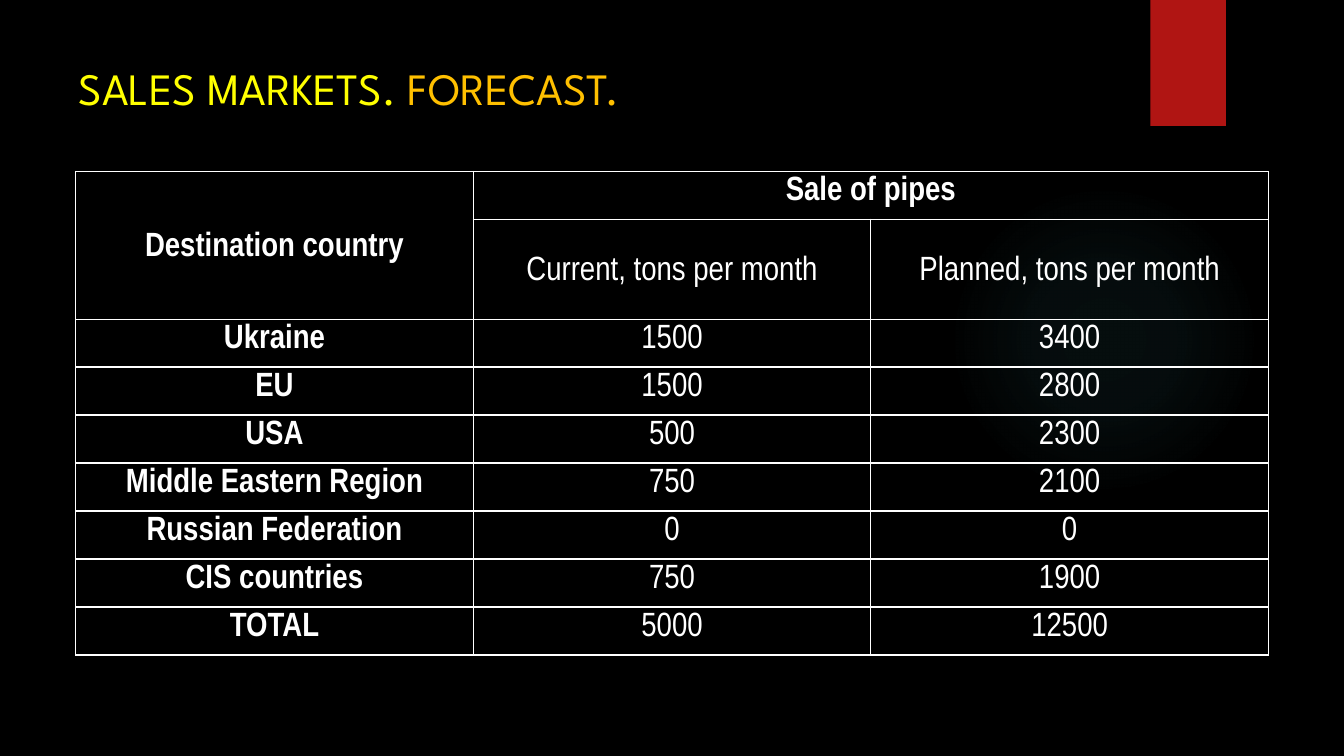
from lxml import etree
from pptx import Presentation, util as u
from pptx.dml.color import RGBColor
from pptx.enum import shapes, text
from pptx.oxml import parse_xml
from pptx.oxml.ns import qn, nsdecls

ROWS = [
    ("Destination country", "Sale of pipes", ""),
    ("", "Current, tons per month", "Planned, tons per month"),
    ("Ukraine", "1500", "3400"),
    ("EU", "1500", "2800"),
    ("USA", "500", "2300"),
    ("Middle Eastern Region", "750", "2100"),
    ("Russian Federation", "0", "0"),
    ("CIS countries", "750", "1900"),
    ("TOTAL", "5000", "12500"),
]


def color(code):
    """Turn a hex string into a colour."""
    return RGBColor.from_string(code)


def add_run(para, words, face, size, code, bold=False):
    """Append one formatted run to a paragraph."""
    run = para.add_run()
    run.text = words
    run.font.name = face
    run.font.size = u.Pt(size)
    run.font.bold = bold
    run.font.color.rgb = color(code)


def add_plain(slide, kind, left, top, width, height):
    """Add a shape without line or shadow."""
    shape = slide.shapes.add_shape(kind, *map(u.Inches, (left, top, width, height)))
    shape.shadow.inherit = False
    shape.line.fill.background()
    return shape


def add_glow(slide):
    """Add the faint round glow behind the table."""
    glow = add_plain(slide, shapes.MSO_SHAPE.OVAL, 9.41, 1.83, 3.08, 3.08)
    glow.fill.background()
    stops = "".join(
        f'<a:gs pos="{pos * 1000}"><a:srgbClr val="50B9C1">'
        f'<a:alpha val="{alpha * 1000}"/></a:srgbClr></a:gs>'
        for pos, alpha in ((0, 7), (36, 6), (69, 0), (100, 0)))
    grad = parse_xml(
        f'<a:gradFill {nsdecls("a")}><a:gsLst>{stops}</a:gsLst>'
        '<a:path path="circle"><a:fillToRect l="50000" t="50000" '
        'r="50000" b="50000"/></a:path></a:gradFill>')
    props = glow.element.spPr
    props.replace(props.find(qn("a:noFill")), grad)


def add_ribbon(slide):
    """Add the red ribbon at the top edge."""
    ribbon = add_plain(slide, shapes.MSO_SHAPE.RECTANGLE, 11.41, 0, 0.75, 1.25)
    ribbon.fill.solid()
    ribbon.fill.fore_color.rgb = color("B01513")


def set_title(slide):
    """Place and fill the title."""
    title = slide.shapes.title
    title.left, title.top = u.Inches(0.68), u.Inches(0.5)
    title.width, title.height = u.Inches(11.6), u.Inches(0.73)
    frame = title.text_frame
    frame.word_wrap = True
    frame.auto_size = text.MSO_AUTO_SIZE.NONE
    frame.vertical_anchor = text.MSO_ANCHOR.MIDDLE
    para = frame.paragraphs[0]
    para.alignment = text.PP_ALIGN.LEFT
    add_run(para, "SALES MARKETS. ", "League Spartan", 32, "FFFF00")
    add_run(para, "FORECAST.", "League Spartan", 32, "FFC000")


def set_borders(cell, code):
    """Draw a thin line on all four sides of a cell."""
    props = cell._tc.get_or_add_tcPr()
    for side in ("lnL", "lnR", "lnT", "lnB"):
        line = etree.SubElement(props, qn(f"a:{side}"), w=str(u.Pt(1)))
        fill = etree.SubElement(line, qn("a:solidFill"))
        etree.SubElement(fill, qn("a:srgbClr"), val=code)


def fill_cell(cell, words, bold, middle):
    """Format one cell and write its text."""
    set_borders(cell, "FFFFFF")
    cell.fill.background()
    cell.margin_left = cell.margin_right = u.Inches(0.07)
    cell.margin_top = cell.margin_bottom = 0
    anchor = text.MSO_ANCHOR
    cell.vertical_anchor = anchor.MIDDLE if middle else anchor.TOP
    if words:
        para = cell.text_frame.paragraphs[0]
        para.alignment = text.PP_ALIGN.CENTER
        para.line_spacing = 1.15
        para.space_after = u.Pt(6)
        add_run(para, words, "Arial Narrow", 24, "FFFFFF", bold)
    else:
        cell.text_frame.paragraphs[0].font.size = u.Pt(1)


def add_sales(slide):
    """Add the sales table."""
    place = map(u.Inches, (0.75, 1.7, 11.83, 4.8))
    table = slide.shapes.add_table(len(ROWS), 3, *place).table
    table.first_row = table.horz_banding = False
    for col in table.columns:
        col.width = u.Inches(11.83 / 3)
    for i, row in enumerate(ROWS):
        table.rows[i].height = u.Inches(0.99 if i == 1 else 0.476)
        for j, words in enumerate(row):
            middle = i == 1 or (i, j) == (0, 0)
            fill_cell(table.cell(i, j), words, i == 0 or j == 0, middle)
    table.cell(0, 0).merge(table.cell(1, 0))
    table.cell(0, 1).merge(table.cell(0, 2))


def main():
    """Build and save the slide."""
    deck = Presentation()
    deck.slide_width, deck.slide_height = u.Inches(13.33), u.Inches(7.5)
    slide = deck.slides.add_slide(deck.slide_layouts[5])
    back = slide.background.fill
    back.solid()
    back.fore_color.rgb = color("000000")
    add_glow(slide)
    add_ribbon(slide)
    set_title(slide)
    add_sales(slide)
    deck.save("out.pptx")


if __name__ == "__main__":
    main()
